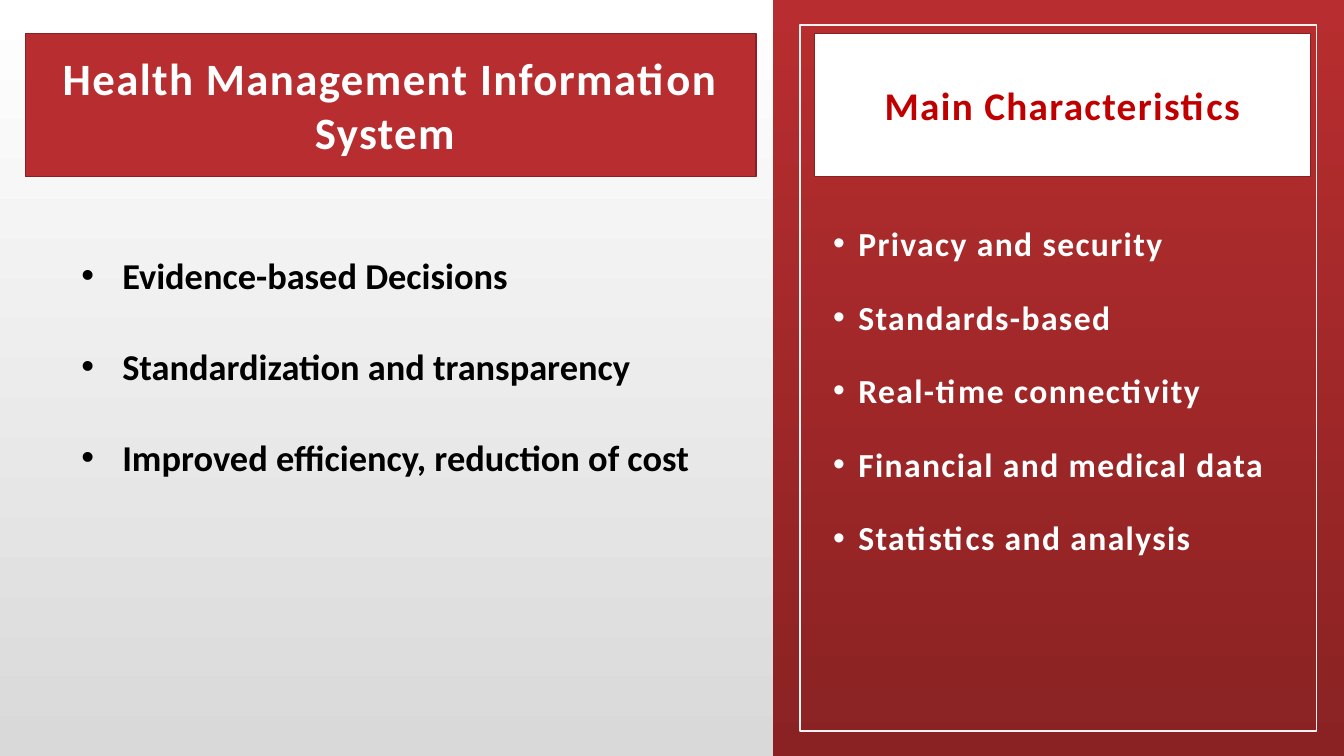
from lxml.etree import SubElement
from pptx import Presentation
from pptx.dml.color import RGBColor
from pptx.enum.shapes import MSO_SHAPE as Shape
from pptx.enum.text import MSO_ANCHOR as Anchor, PP_ALIGN as Align
from pptx.oxml.ns import qn
from pptx.util import Emu, Pt

PX = 9525  # 96 px to the inch
FONT = "Calibri"
COLORS = {
    "white": "FFFFFF",
    "grey": "D9D9D9",
    "frame": "F2F2F2",
    "red": "B82D2F",
    "dark_red": "8A2223",
    "border": "882123",
    "heading": "C00000",
    "black": "000000",
}
BENEFITS = [
    "Evidence-based Decisions",
    "Standardization and transparency",
    "Improved efficiency, reduction of cost",
]
CHARACTERISTICS = [
    "Privacy and security",
    "Standards-based",
    "Real-time connectivity",
    "Financial and medical data",
    "Statistics and analysis",
]


def px(*lengths):
    return [Emu(length * PX) for length in lengths]


def rgb(name):
    return RGBColor.from_string(COLORS[name])


def shade_downwards(fill, top, bottom):
    fill.gradient()
    fill.gradient_angle = 270
    for stop, name in zip(fill.gradient_stops, (top, bottom)):
        stop.color.rgb = rgb(name)


def add_box(page, area, line=None, width=1):
    """Add an unfilled rectangle, outlined only if a line colour is given."""
    box = page.shapes.add_shape(Shape.RECTANGLE, *px(*area))
    box.shadow.inherit = False
    box.fill.background()
    if line:
        box.line.color.rgb = rgb(line)
        box.line.width = Pt(width)
    else:
        box.line.fill.background()
    return box


def style_paragraph(para, text, size, color, tracking):
    """Write bold text; tracking is the letter spacing in points."""
    span = para.add_run()
    span.text = text
    para.space_before = Pt(18)
    para.font.name = FONT
    para.font.size = Pt(size)
    para.font.bold = True
    para.font.color.rgb = rgb(color)
    if tracking:
        span.font._element.set("spc", str(tracking * 100))


def add_heading(page, area, text, size, fill, color):
    box = add_box(page, area, "border")
    box.fill.solid()
    box.fill.fore_color.rgb = rgb(fill)
    frame = box.text_frame
    frame.word_wrap = True
    frame.vertical_anchor = Anchor.MIDDLE
    para = frame.paragraphs[0]
    para.alignment = Align.CENTER
    style_paragraph(para, text, size, color, tracking=1)


def add_bullets(page, area, items, size, color, indent, spacing, tracking=0):
    frame = page.shapes.add_textbox(*px(*area)).text_frame
    frame.word_wrap = True
    for index, item in enumerate(items):
        para = frame.add_paragraph() if index else frame.paragraphs[0]
        style_paragraph(para, item, size, color, tracking)
        para.line_spacing = spacing
        props = para._p.get_or_add_pPr()
        props.set("marL", str(indent * PX))
        props.set("indent", str(-indent * PX))
        bullet_font = SubElement(props, qn("a:buFont"))
        bullet_font.set("typeface", "Arial")
        bullet = SubElement(props, qn("a:buChar"))
        bullet.set("char", "•")
        # The schema wants default run properties after the bullet.
        props.append(props.find(qn("a:defRPr")))


def main():
    deck = Presentation()
    deck.slide_width, deck.slide_height = px(1280, 720)
    page = deck.slides.add_slide(deck.slide_layouts[6])
    shade_downwards(page.background.fill, "white", "grey")

    panel = add_box(page, (736, 0, 544, 720))
    shade_downwards(panel.fill, "red", "dark_red")
    add_box(page, (762, 24, 492, 672), "frame", 1.25)

    add_heading(page, (24, 32, 696, 136),
                "Health Management Information System ", 32, "red", "white")
    add_heading(page, (776, 32, 472, 136),
                "Main Characteristics", 28, "white", "heading")
    add_bullets(page, (68, 216, 608, 396), BENEFITS, 26, "black",
                indent=39, spacing=1.5)
    add_bullets(page, (784, 200, 456, 480), CHARACTERISTICS, 24, "white",
                indent=24, spacing=1.2, tracking=1)
    deck.save("out.pptx")


if __name__ == "__main__":
    main()
